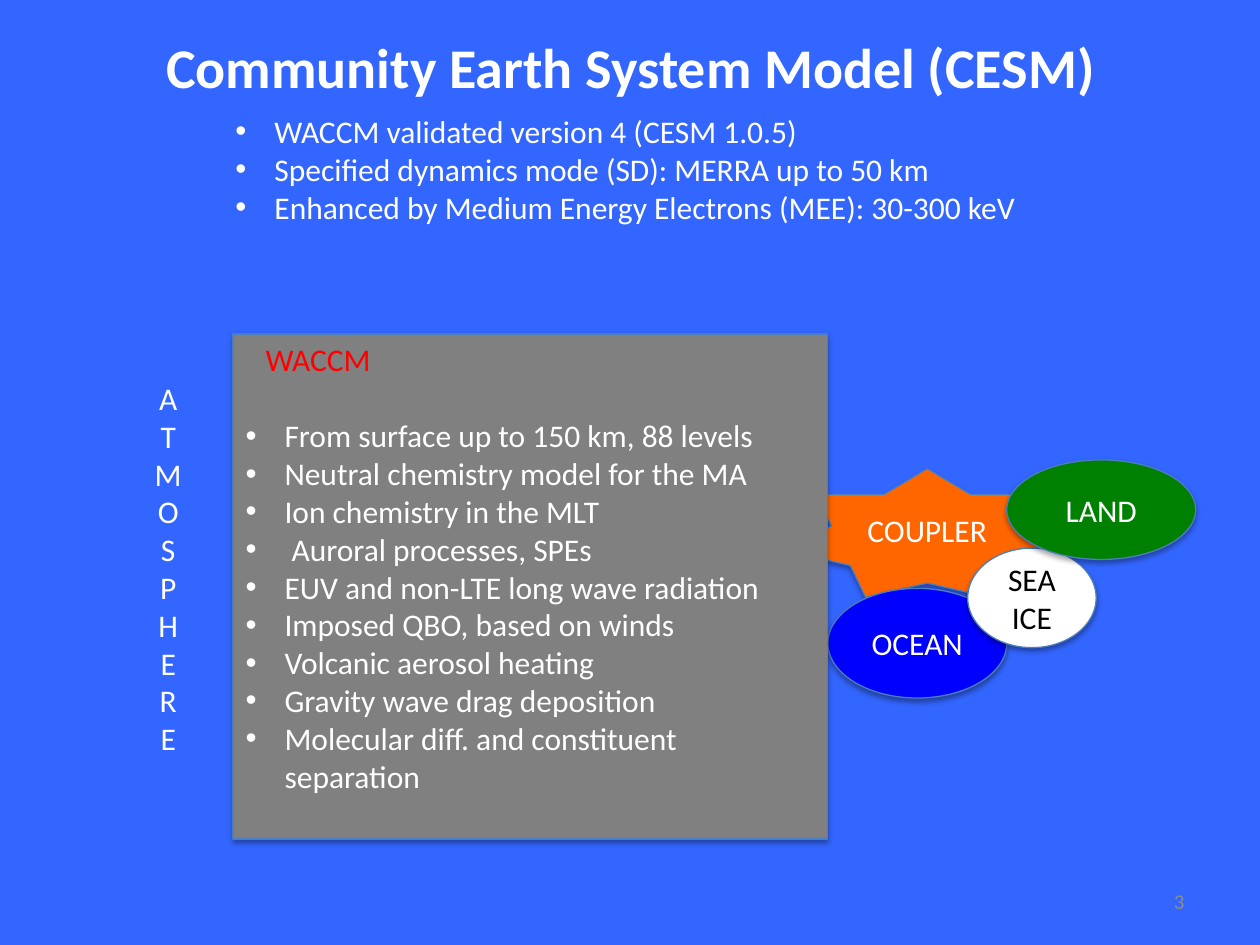
from dataclasses import dataclass

from lxml.etree import SubElement
from pptx import Presentation
from pptx.dml.color import RGBColor
from pptx.enum.shapes import MSO_SHAPE
from pptx.enum.text import MSO_ANCHOR, MSO_AUTO_SIZE, PP_ALIGN
from pptx.oxml.ns import qn
from pptx.util import Inches, Pt

FONT = "Calibri"
WHITE = "FFFFFF"
OUTLINE = "4B7EBC"
BULLET_INDENT = 0.31
LINE_HEIGHT = 0.3


@dataclass
class Box:
    left: float
    top: float
    width: float
    height: float

    def emu(self) -> list:
        return [Inches(v) for v in (self.left, self.top, self.width, self.height)]


@dataclass
class Component:
    label: str
    kind: MSO_SHAPE
    box: Box
    fill: str
    color: str = WHITE


COMPONENTS = [
    Component("COUPLER", MSO_SHAPE.STAR_7_POINT, Box(6.26, 3.72, 2.2, 1.02), "FF6600"),
    Component("OCEAN", MSO_SHAPE.OVAL, Box(6.57, 4.67, 1.42, 0.87), "0000FF"),
    Component("SEA ICE", MSO_SHAPE.OVAL, Box(7.68, 4.35, 1.02, 0.79), WHITE, "000000"),
    Component("LAND", MSO_SHAPE.OVAL, Box(7.99, 3.65, 1.5, 0.79), "008000"),
]

MODEL_SETUP = [
    "WACCM validated version 4 (CESM 1.0.5)",
    "Specified dynamics mode (SD): MERRA up to 50 km",
    "Enhanced by Medium Energy Electrons (MEE): 30-300 keV",
]

WACCM_FEATURES = [
    "From surface up to 150 km, 88 levels",
    "Neutral chemistry model for the MA",
    "Ion chemistry in the MLT",
    " Auroral processes, SPEs",
    "EUV and non-LTE long wave radiation",
    "Imposed QBO, based on winds",
    "Volcanic aerosol heating",
    "Gravity wave drag deposition",
    "Molecular diff. and constituent separation",
]


def rgb(value: str) -> RGBColor:
    return RGBColor.from_string(value)


def add_run(p, text: str, color: str = WHITE, size: float = 18, bold: bool = False) -> None:
    r = p.add_run()
    r.text = text
    r.font.name = FONT
    r.font.size = Pt(size)
    r.font.bold = bold
    r.font.color.rgb = rgb(color)


def add_bullets(tf, items: list[str]) -> None:
    for i, item in enumerate(items):
        p = tf.add_paragraph() if i else tf.paragraphs[0]
        p.alignment = PP_ALIGN.LEFT
        pPr = p._p.get_or_add_pPr()
        pPr.set("marL", str(Inches(BULLET_INDENT)))
        pPr.set("indent", str(-Inches(BULLET_INDENT)))
        SubElement(pPr, qn("a:buFont"), typeface="Arial")
        SubElement(pPr, qn("a:buChar"), char="•")
        add_run(p, item)


def add_soft_shadow(sp) -> None:
    """Give the shape a faint black shadow just below it."""
    sp.shadow.inherit = False
    effects = sp._element.spPr.find(qn("a:effectLst"))
    shadow = SubElement(effects, qn("a:outerShdw"), blurRad=str(Pt(3.1)),
                        dist=str(Pt(1.8)), dir="5400000", rotWithShape="0")
    black = SubElement(shadow, qn("a:srgbClr"), val="000000")
    SubElement(black, qn("a:alpha"), val="35000")


def add_block(shapes, kind: MSO_SHAPE, box: Box, fill: str):
    sp = shapes.add_shape(kind, *box.emu())
    sp.fill.solid()
    sp.fill.fore_color.rgb = rgb(fill)
    sp.line.color.rgb = rgb(OUTLINE)
    sp.line.width = Pt(0.75)
    add_soft_shadow(sp)
    sp.text_frame.vertical_anchor = MSO_ANCHOR.MIDDLE
    return sp


def add_component(shapes, item: Component) -> None:
    sp = add_block(shapes, item.kind, item.box, item.fill)
    p = sp.text_frame.paragraphs[0]
    p.alignment = PP_ALIGN.CENTER
    add_run(p, item.label, item.color)


def add_text_frame(shapes, box: Box, wrap: bool = True, grow: bool = True):
    tf = shapes.add_textbox(*box.emu()).text_frame
    tf.word_wrap = wrap
    tf.auto_size = MSO_AUTO_SIZE.SHAPE_TO_FIT_TEXT if grow else MSO_AUTO_SIZE.NONE
    return tf


def add_vertical_word(shapes, box: Box, word: str) -> None:
    p = add_text_frame(shapes, box).paragraphs[0]
    p.alignment = PP_ALIGN.CENTER
    for i, letter in enumerate(word):
        if i:
            p.add_line_break()
        add_run(p, letter)


def main() -> None:
    prs = Presentation()
    prs.slide_width, prs.slide_height = Inches(10), Inches(7.5)
    s = prs.slides.add_slide(prs.slide_layouts[6])
    s.background.fill.solid()
    s.background.fill.fore_color.rgb = rgb("3366FF")

    group = s.shapes.add_group_shape()
    for item in COMPONENTS:
        add_component(group.shapes, item)

    tf = add_text_frame(s.shapes, Box(1.22, 0.21, 7.64, 0.64), wrap=False)
    add_run(tf.paragraphs[0], "Community Earth System Model (CESM)", size=32, bold=True)

    panel = add_block(s.shapes, MSO_SHAPE.RECTANGLE, Box(1.85, 2.65, 4.72, 4.01), "808080")
    panel.text_frame.margin_top = Inches(0.05 + LINE_HEIGHT)
    add_bullets(panel.text_frame, WACCM_FEATURES)

    add_vertical_word(s.shapes, Box(1.06, 2.96, 0.55, 3.13), "ATMOSPHERE")
    add_bullets(add_text_frame(s.shapes, Box(1.77, 0.84, 6.77, 1.31)), MODEL_SETUP)

    tf = add_text_frame(s.shapes, Box(7.17, 6.95, 2.33, 0.4), grow=False)
    tf.vertical_anchor = MSO_ANCHOR.MIDDLE
    tf.paragraphs[0].alignment = PP_ALIGN.RIGHT
    add_run(tf.paragraphs[0], "3", "8C8C8C", 12)

    tf = add_text_frame(s.shapes, Box(2.01, 2.65, 1.04, 0.71), wrap=False)
    add_run(tf.paragraphs[0], "WACCM", "FF0000")

    prs.save("out.pptx")


if __name__ == "__main__":
    main()
